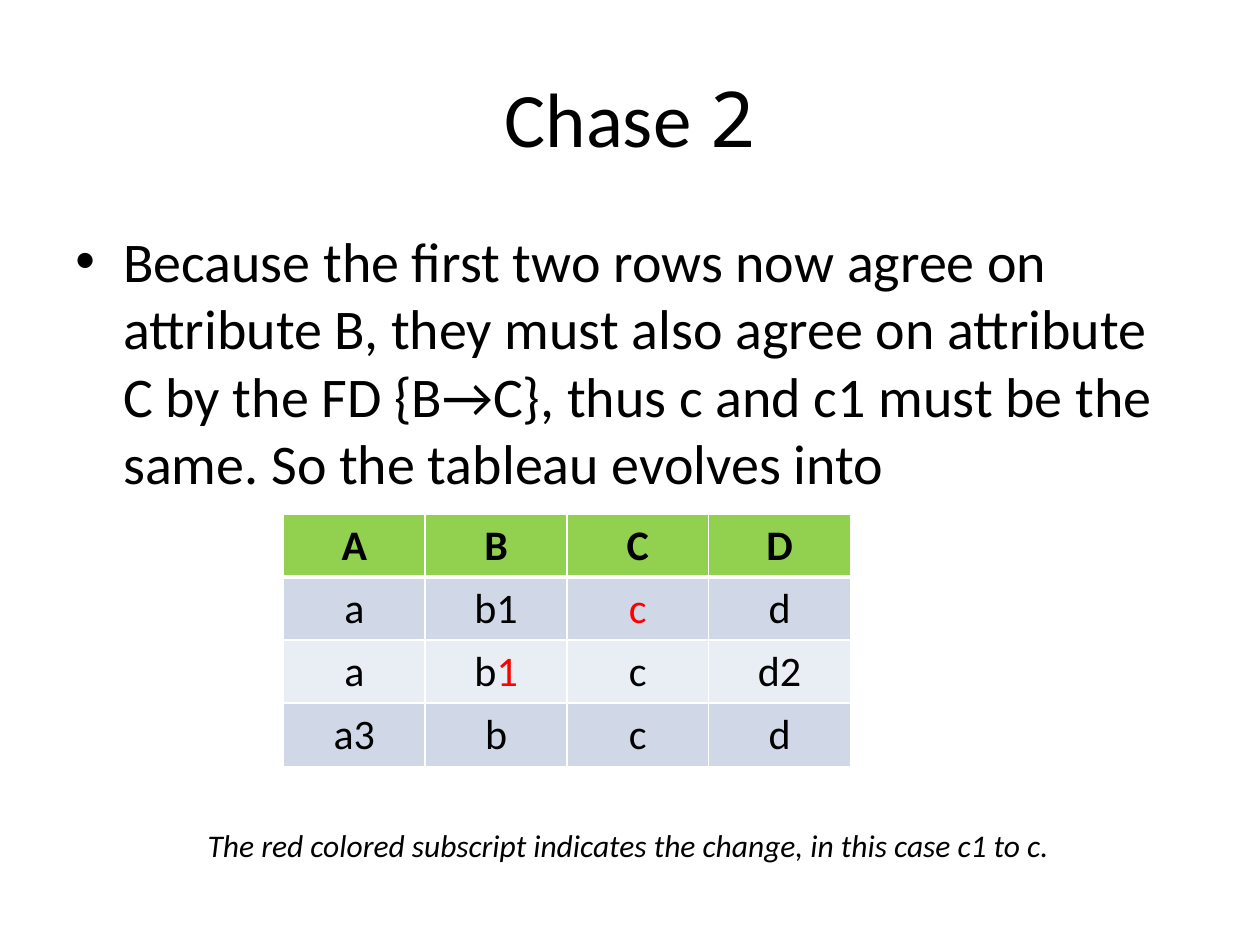
import lxml.etree
import pptx
import pptx.dml.color
import pptx.enum.text
import pptx.oxml.ns
import pptx.util

Inches = pptx.util.Inches
Pt = pptx.util.Pt
RGBColor = pptx.dml.color.RGBColor
CENTER = pptx.enum.text.PP_ALIGN.CENTER
MIDDLE = pptx.enum.text.MSO_ANCHOR.MIDDLE
FIT = pptx.enum.text.MSO_AUTO_SIZE.SHAPE_TO_FIT_TEXT
qn = pptx.oxml.ns.qn

BLACK = RGBColor(0, 0, 0)
WHITE = RGBColor(255, 255, 255)
RED = RGBColor(255, 0, 0)
GREEN = RGBColor(0x92, 0xD0, 0x50)
BANDS = [RGBColor(0xD0, 0xD8, 0xE8), RGBColor(0xE9, 0xED, 0xF4)]

# Each cell is plain black text, then the part marked red
TABLEAU = [
    [("A", ""), ("B", ""), ("C", ""), ("D", "")],
    [("a", ""), ("b1", ""), ("", "c"), ("d", "")],
    [("a", ""), ("b", "1"), ("c", ""), ("d2", "")],
    [("a3", ""), ("b", ""), ("c", ""), ("d", "")],
]


def style(para, size):
    para.font.name = "Calibri"
    para.font.size = Pt(size)
    para.font.color.rgb = BLACK


def add_text(slide, box, text, size):
    frame = slide.shapes.add_textbox(*map(Inches, box)).text_frame
    frame.word_wrap = True
    para = frame.paragraphs[0]
    para.add_run().text = text
    style(para, size)
    return frame, para


def add_title(slide, box):
    frame, para = add_text(slide, box, "Chase ", 44)
    frame.vertical_anchor = MIDDLE
    para.alignment = CENTER
    digit = para.add_run()
    digit.text = "2"
    digit.font.name = "Noto Sans Mono"


def add_body(slide, box):
    text = ("Because the first two rows now agree on attribute B, they must "
            "also agree on attribute C by the FD {B→C}, thus c and c1 must "
            "be the same. So the tableau evolves into")
    para = add_text(slide, box, text, 32)[1]
    para.space_before = Pt(6.4)
    # Hanging bullet
    props = para._p.get_or_add_pPr()
    props.set("marL", str(Inches(0.38)))
    props.set("indent", str(Inches(-0.38)))
    lxml.etree.SubElement(props, qn("a:buFont"), typeface="Arial")
    lxml.etree.SubElement(props, qn("a:buChar"), char="•")


def add_border(cell, side, width):
    line = lxml.etree.SubElement(cell._tc.get_or_add_tcPr(),
                                 qn("a:ln" + side), w=str(Pt(width)))
    fill = lxml.etree.SubElement(line, qn("a:solidFill"))
    lxml.etree.SubElement(fill, qn("a:srgbClr"), val=str(WHITE))


def fill_cell(cell, plain, marked, row):
    para = cell.text_frame.paragraphs[0]
    para.alignment = CENTER
    style(para, 24)
    para.font.bold = row == 0
    for text, color in ((plain, BLACK), (marked, RED)):
        if text:
            run = para.add_run()
            run.text = text
            run.font.color.rgb = color
    # Thick rule between the header and the rows
    for side in "LRTB":
        thick = (row, side) in ((0, "B"), (1, "T"))
        add_border(cell, side, 3 if thick else 1)
    cell.fill.solid()
    cell.fill.fore_color.rgb = BANDS[(row - 1) % 2] if row else GREEN


def add_tableau(slide, box):
    table = slide.shapes.add_table(len(TABLEAU), len(TABLEAU[0]),
                                   *map(Inches, box)).table
    for row, cells in enumerate(TABLEAU):
        for col, (plain, marked) in enumerate(cells):
            fill_cell(table.cell(row, col), plain, marked, row)


def add_note(slide, box):
    text = ("The red colored subscript indicates the change, "
            "in this case c1 to c.")
    frame, para = add_text(slide, box, text, 18)
    frame.word_wrap = False
    frame.auto_size = FIT
    para.font.italic = True


def main():
    deck = pptx.Presentation()
    deck.slide_width = Inches(10)
    deck.slide_height = Inches(7.5)
    slide = deck.slides.add_slide(deck.slide_layouts[6])
    add_title(slide, (0.5, 0.3, 9, 1.25))
    add_body(slide, (0.5, 1.75, 9, 4.95))
    add_tableau(slide, (2.25, 4.08, 4.5, 2))
    add_note(slide, (1.55, 6.51, 6.9, 0.4))
    deck.save("out.pptx")


if __name__ == "__main__":
    main()
